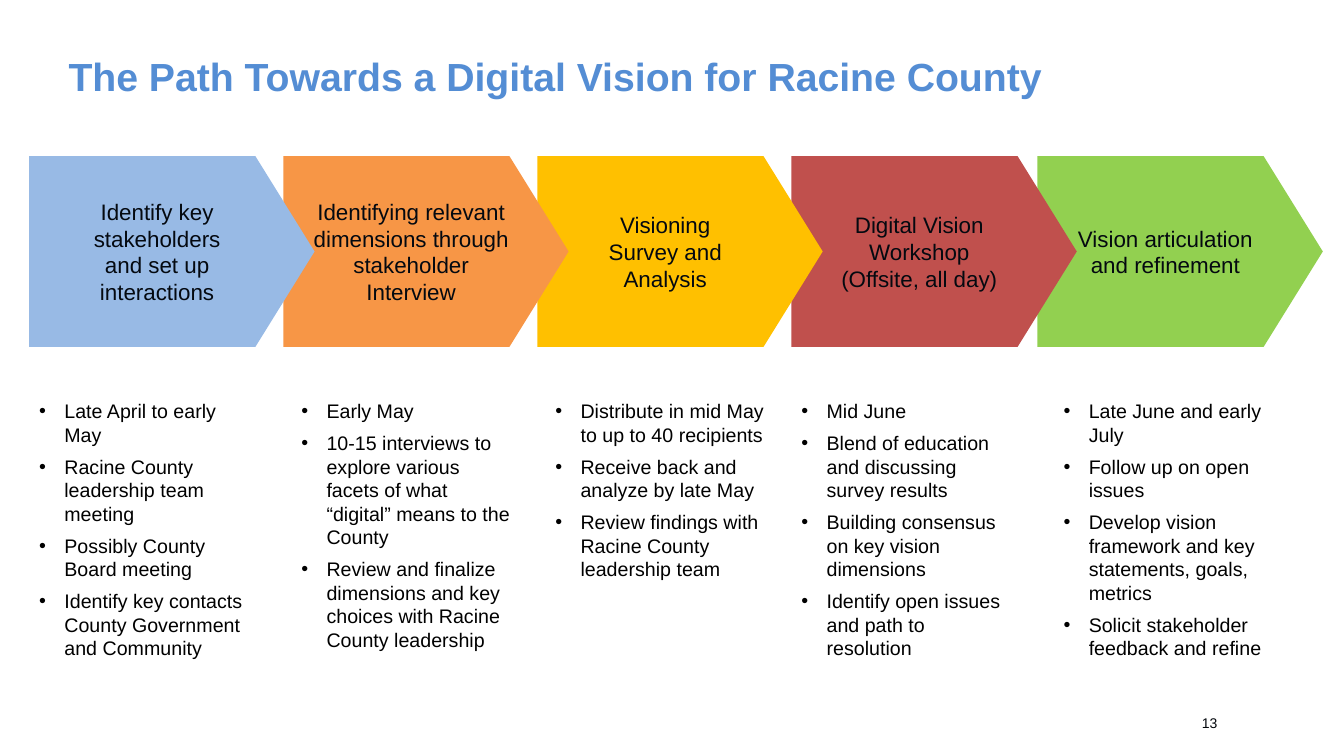
from lxml import etree
from pptx import Presentation
from pptx import util as u
from pptx.dml.color import RGBColor
from pptx.enum import shapes, text
from pptx.oxml.ns import qn

COLOURS = {
    "title": "548DD4", "step": "040910", "list": "000000", "number": "03070C",
    "stakeholders": "98BAE5", "interviews": "F79646", "survey": "FFC000",
    "workshop": "C0504D", "refinement": "92D050",
}
FONTS = {
    "title": {"size": u.Pt(28), "bold": True},
    "step": {"size": u.Pt(16), "bold": False},
    "list": {"size": u.Pt(14), "bold": False},
    "number": {"size": u.Pt(10), "bold": False},
}
NO_MARGINS = {"margin_left": 0, "margin_right": 0, "margin_top": 0, "margin_bottom": 0}

# Each step: colour name, arrow left, list left, arrow text, list items
STEPS = [
    ("stakeholders", 0.29, 0.29, "Identify key stakeholders\nand set up\ninteractions",
     ["Late April to early May",
      "Racine County leadership team meeting",
      "Possibly County Board meeting",
      "Identify key contacts County Government and Community"]),
    ("interviews", 2.81, 2.89,
     "Identifying relevant\ndimensions through\nstakeholder\nInterview",
     ["Early May",
      "10-15 interviews to explore various facets of what “digital” means to the County",
      "Review and finalize dimensions and key choices with Racine County leadership"]),
    ("survey", 5.33, 5.41, "Visioning\nSurvey and\nAnalysis",
     ["Distribute in mid May to up to 40 recipients",
      "Receive back and analyze by late May",
      "Review findings with Racine County leadership team"]),
    ("workshop", 7.85, 7.85, "Digital Vision\nWorkshop\n(Offsite, all day)",
     ["Mid June",
      "Blend of education and discussing survey results",
      "Building consensus on key vision dimensions",
      "Identify open issues and path to resolution"]),
    ("refinement", 10.29, 10.45, "Vision articulation\nand refinement",
     ["Late June and early July",
      "Follow up on open issues",
      "Develop vision framework and key statements, goals, metrics",
      "Solicit stakeholder feedback and refine"]),
]


def apply_format(target, values):
    for name, value in values.items():
        setattr(target, name, value)


def write(paragraph, wording, role, alignment=text.PP_ALIGN.LEFT):
    paragraph.text = wording
    paragraph.alignment = alignment
    for run in paragraph.runs:
        apply_format(run.font, {"name": "Arial", **FONTS[role]})
        run.font.color.rgb = RGBColor.from_string(COLOURS[role])


deck = Presentation()
apply_format(deck, {"slide_width": u.Inches(13.33), "slide_height": u.Inches(7.5)})
slide = deck.slides.add_slide(deck.slide_layouts.get_by_name("Title Only"))

# Title
heading = slide.shapes.title
apply_format(heading, {"left": u.Inches(0.68), "top": u.Inches(0.52),
                       "width": u.Inches(11.33), "height": u.Inches(0.5)})
apply_format(heading.text_frame, {**NO_MARGINS, "auto_size": text.MSO_AUTO_SIZE.NONE,
                                  "vertical_anchor": text.MSO_ANCHOR.TOP})
write(heading.text_frame.paragraphs[0],
      "The Path Towards a Digital Vision for Racine County", "title")

# Slide number
number = slide.shapes.add_textbox(u.Inches(11.92), u.Inches(6.97),
                                  u.Inches(0.44), u.Inches(0.4))
apply_format(number.text_frame, {**NO_MARGINS, "margin_right": u.Inches(0.1),
                                 "word_wrap": True,
                                 "vertical_anchor": text.MSO_ANCHOR.MIDDLE})
write(number.text_frame.paragraphs[0], "13", "number")

# Step arrows, last first so that each point overlaps the next arrow
for colour, arrow_left, _, label, _ in reversed(STEPS):
    arrow = slide.shapes.add_shape(shapes.MSO_SHAPE.PENTAGON, u.Inches(arrow_left),
                                   u.Inches(1.55), u.Inches(2.83), u.Inches(1.89))
    arrow.adjustments[0] = 0.31
    arrow.shadow.inherit = False
    arrow.fill.solid()
    arrow.fill.fore_color.rgb = RGBColor.from_string(COLOURS[colour])
    arrow.line.fill.background()
    apply_format(arrow.text_frame, {"word_wrap": True,
                                    "vertical_anchor": text.MSO_ANCHOR.MIDDLE})
    write(arrow.text_frame.paragraphs[0], label, "step", text.PP_ALIGN.CENTER)

# Bulleted list under each arrow
for _, _, list_left, _, items in STEPS:
    activities = slide.shapes.add_textbox(u.Inches(list_left), u.Inches(3.91),
                                          u.Inches(2.28), u.Inches(2.71))
    apply_format(activities.text_frame, {"word_wrap": True,
                                         "auto_size": text.MSO_AUTO_SIZE.SHAPE_TO_FIT_TEXT})
    for index, item in enumerate(items):
        frame = activities.text_frame
        activity = frame.add_paragraph() if index else frame.paragraphs[0]
        write(activity, item, "list")
        activity.space_after = u.Pt(6)
        bullet = activity._p.get_or_add_pPr()
        bullet.set("marL", str(u.Inches(0.25)))
        bullet.set("indent", str(-u.Inches(0.25)))
        etree.SubElement(bullet, qn("a:buFont"), typeface="Arial")
        etree.SubElement(bullet, qn("a:buChar"), char="•")

deck.save("out.pptx")
